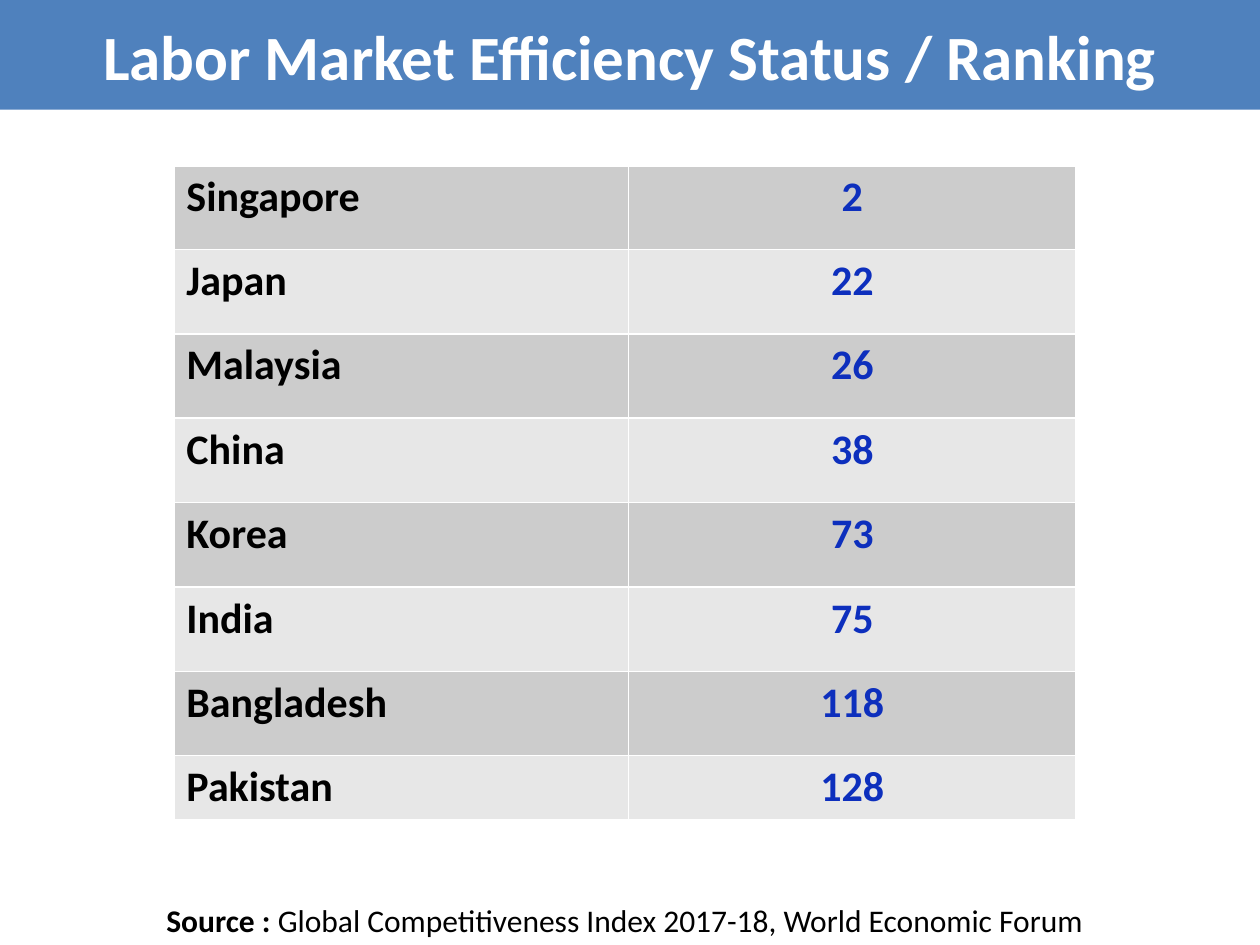
from typing import NamedTuple

import pptx
import pptx.dml.color
import pptx.enum.text
import pptx.oxml
import pptx.oxml.ns
import pptx.util

Inches = pptx.util.Inches
RGBColor = pptx.dml.color.RGBColor
PP_ALIGN = pptx.enum.text.PP_ALIGN

WHITE = RGBColor(0xFF, 0xFF, 0xFF)
BLACK = RGBColor(0x00, 0x00, 0x00)
BANNER_BLUE = RGBColor(0x4F, 0x81, 0xBD)
RANK_BLUE = RGBColor(0x0D, 0x2F, 0xBD)
BANDS = (RGBColor(0xCC, 0xCC, 0xCC), RGBColor(0xE7, 0xE7, 0xE7))

COLUMN_WIDTHS = (3.61, 3.55)
HEADER_HEIGHT, ROW_HEIGHT, LAST_HEIGHT = 0.79, 0.67, 0.5


class Ranking(NamedTuple):
    country: str
    rank: int


RANKINGS = (
    Ranking("Singapore", 2),
    Ranking("Japan", 22),
    Ranking("Malaysia", 26),
    Ranking("China", 38),
    Ranking("Korea", 73),
    Ranking("India", 75),
    Ranking("Bangladesh", 118),
    Ranking("Pakistan", 128),
)


def add_text(p, text: str, *, size: float, color: RGBColor = BLACK,
             bold: bool = False, align=PP_ALIGN.LEFT) -> None:
    p.alignment = align
    r = p.add_run()
    r.text = text
    r.font.name = "Calibri"
    r.font.size = pptx.util.Pt(size)
    r.font.bold = bold
    r.font.color.rgb = color


def style_cell(cell, fill: RGBColor, bottom: float = 1) -> None:
    """Fill the cell and give it white borders; bottom is a width in points."""
    tc_pr = cell._tc.get_or_add_tcPr()
    for side, width in (("L", 1), ("R", 1), ("T", 1), ("B", bottom)):
        tc_pr.append(pptx.oxml.parse_xml(
            f'<a:ln{side} {pptx.oxml.ns.nsdecls("a")} w="{pptx.util.Pt(width)}">'
            f'<a:solidFill><a:srgbClr val="{WHITE}"/></a:solidFill></a:ln{side}>'))
    cell.fill.solid()
    cell.fill.fore_color.rgb = fill


def add_rankings(s) -> None:
    heights = [HEADER_HEIGHT] + [ROW_HEIGHT] * (len(RANKINGS) - 1) + [LAST_HEIGHT]
    table = s.shapes.add_table(
        len(heights), len(COLUMN_WIDTHS), Inches(1.38), Inches(0.52),
        Inches(sum(COLUMN_WIDTHS)), Inches(sum(heights))).table
    for column, width in zip(table.columns, COLUMN_WIDTHS):
        column.width = Inches(width)
    for row, height in zip(table.rows, heights):
        row.height = Inches(height)

    table.cell(0, 0).merge(table.cell(0, 1))
    for column in range(len(COLUMN_WIDTHS)):
        style_cell(table.cell(0, column), WHITE, bottom=3)
    for i, ranking in enumerate(RANKINGS):
        country, rank = table.cell(i + 1, 0), table.cell(i + 1, 1)
        for cell in (country, rank):
            style_cell(cell, BANDS[i % 2])
        add_text(country.text_frame.paragraphs[0], ranking.country,
                 size=24, bold=True)
        add_text(rank.text_frame.paragraphs[0], str(ranking.rank), size=24,
                 color=RANK_BLUE, bold=True, align=PP_ALIGN.CENTER)


def add_source(s) -> None:
    sp = s.shapes.add_textbox(Inches(1.06), Inches(7.1), Inches(7.8), Inches(0.4))
    tf = sp.text_frame
    tf.word_wrap = True
    p = tf.paragraphs[0]
    add_text(p, "Source :", size=18, bold=True, align=PP_ALIGN.CENTER)
    add_text(p, " Global Competitiveness Index 2017-18, World Economic Forum",
             size=18, align=PP_ALIGN.CENTER)


def format_title(s) -> None:
    sp = s.shapes.title
    sp.left, sp.top, sp.width, sp.height = 0, 0, Inches(10), Inches(0.87)
    sp.fill.solid()
    sp.fill.fore_color.rgb = BANNER_BLUE
    tf = sp.text_frame
    tf.auto_size = pptx.enum.text.MSO_AUTO_SIZE.NONE
    tf.vertical_anchor = pptx.enum.text.MSO_ANCHOR.MIDDLE
    add_text(tf.paragraphs[0], "Labor Market Efficiency Status / Ranking",
             size=36, color=WHITE, bold=True, align=PP_ALIGN.CENTER)
    # The banner lies over the blank top row of the table.
    s.shapes._spTree.append(sp._element)


def main() -> None:
    prs = pptx.Presentation()
    prs.slide_width, prs.slide_height = Inches(10), Inches(7.5)
    s = prs.slides.add_slide(prs.slide_layouts[5])
    add_rankings(s)
    add_source(s)
    format_title(s)
    prs.save("out.pptx")


if __name__ == "__main__":
    main()
